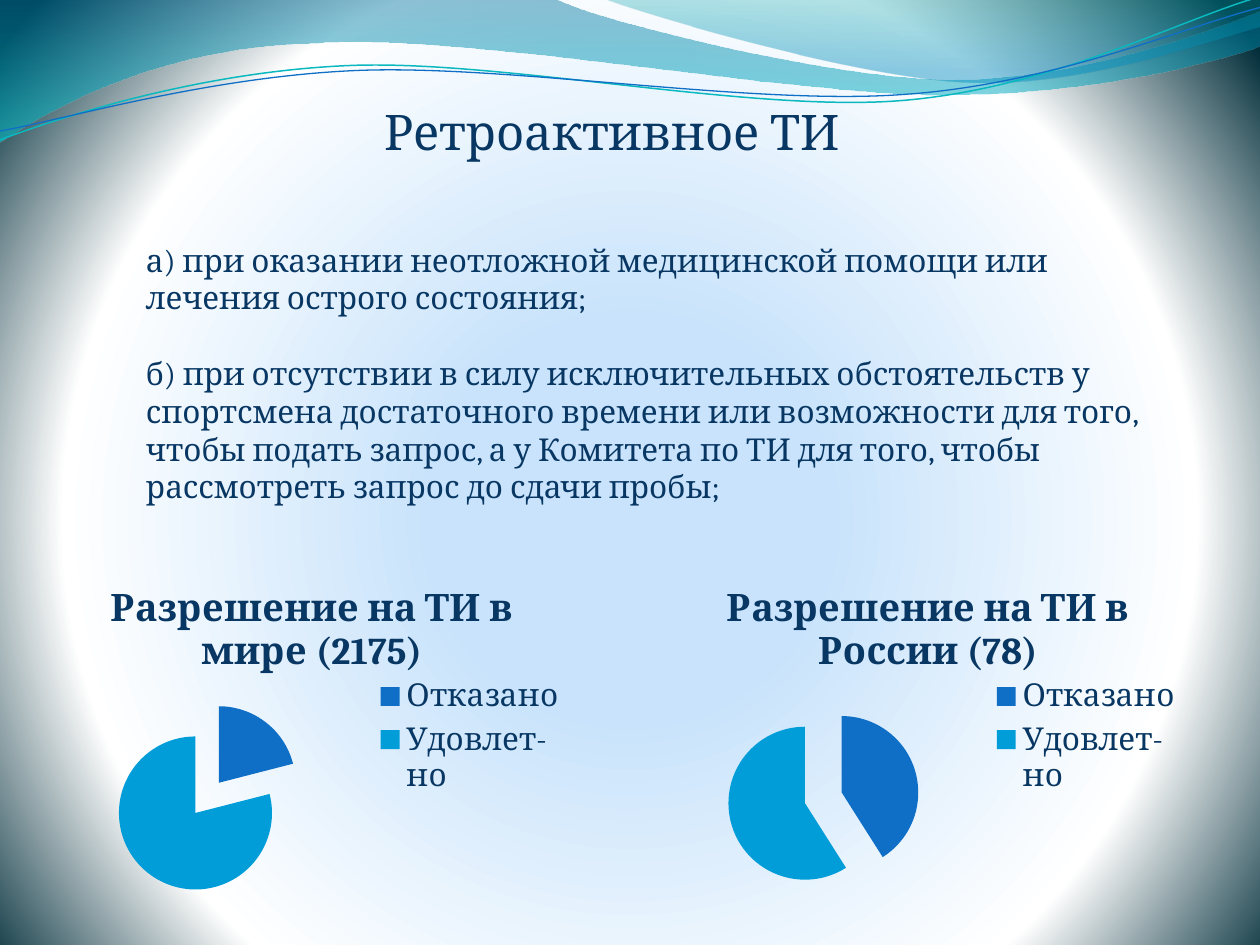
from dataclasses import dataclass
from math import cos, radians, sin

from lxml import etree
from pptx import Presentation
from pptx.chart.data import CategoryChartData
from pptx.dml.color import RGBColor
from pptx.enum.chart import XL_CHART_TYPE, XL_LEGEND_POSITION
from pptx.enum.text import MSO_AUTO_SIZE
from pptx.oxml import parse_xml
from pptx.oxml.ns import nsdecls, qn
from pptx.slide import Slide
from pptx.util import Inches, Pt

FONT = "Cambria"
COLORS = {
    "text": "083763", "chart": "FFFFFF", "refused": "0F6FC6", "granted": "009DD9",
    "outline": "FF0000", "teal_line": "0AB8BF", "blue_line": "0F6FC6",
}
TILT = 357.3
Point = tuple[float, float]


@dataclass
class Wave:
    """Segments hold one point for a line or three for a Bezier curve."""
    start: Point
    segments: list[tuple[Point, ...]]
    stops: tuple = ()
    line: str = ""
    width: float = 0
    center: Point = (0, 0)


@dataclass
class Pie:
    title: str
    left: float
    values: tuple[int, int]


WAVES = [
    Wave((0, 0), [
        ((4.4, -0.01),), ((4.76, 0.17), (6.64, 0.63), (7.58, 0.63)),
        ((8.53, 0.63), (9.58, 0.26), (10, 0.09)), ((10.01, 0.36),),
        ((9.83, 0.44), (8.7, 0.76), (7.46, 0.75)),
        ((6.22, 0.75), (3.82, 0.28), (2.57, 0.34)),
        ((1.29, 0.36), (0.46, 0.83), (-0.01, 1.13)), ((0, 0),),
    ], stops=((0, "0074A1", 45), (100, "00C6CF", 55))),
    Wave((4.79, -0.01), [
        ((5.09, 0.11), (6.82, 0.62), (7.69, 0.65)),
        ((8.56, 0.69), (9.61, 0.32), (10, 0.21)), ((10, 0),), ((4.79, -0.01),),
    ], stops=((0, "00A1A9", 30), (80, "008BBF", 45))),
    Wave((0, 1.11), [
        ((0.48, 0.93), (1.58, 0.57), (2.77, 0.52)),
        ((3.95, 0.47), (5.93, 0.89), (7.13, 0.8)),
        ((8.33, 0.71), (9.38, 0.15), (9.98, -0.02)),
    ], line="teal_line", width=0.85, center=(4.99, 0.57)),
    Wave((0, 1.04), [
        ((0.47, 0.96), (1.64, 0.61), (2.83, 0.56)),
        ((4.03, 0.51), (5.97, 0.84), (7.17, 0.75)),
        ((8.36, 0.67), (9.41, 0.21), (10, 0.06)),
    ], line="blue_line", width=0.75, center=(5, 0.59)),
]
PIES = [
    Pie("Разрешение на ТИ в мире (2175)", 0.35, (21, 79)),
    Pie("Разрешение на ТИ в России (78)", 5.24, (41, 59)),
]
CONDITIONS = [
    "а) при оказании неотложной медицинской помощи или лечения острого состояния;",
    "б) при отсутствии в силу исключительных обстоятельств у спортсмена достаточного "
    "времени или возможности для того, чтобы подать запрос, а у Комитета по ТИ для того, "
    "чтобы рассмотреть запрос до сдачи пробы;",
]


def rgb(name: str) -> RGBColor:
    return RGBColor.from_string(COLORS[name])


def gradient(stops: tuple, direction: str) -> etree._Element:
    """Make a gradFill from (percent, colour, opacity percent) stops."""
    marks = "".join(
        f'<a:gs pos="{place * 1000}"><a:srgbClr val="{color}">'
        f'<a:alpha val="{opacity * 1000}"/></a:srgbClr></a:gs>'
        for place, color, opacity in stops
    )
    return parse_xml(f'<a:gradFill {nsdecls("a")} rotWithShape="1">'
                     f"<a:gsLst>{marks}</a:gsLst>{direction}</a:gradFill>")


def paint_background(slide: Slide) -> None:
    slide.background.fill.solid()
    properties = slide.background._cSld.bg.bgPr
    glow = gradient(
        ((25, "C8E3FB", 100), (72, "FFFFFF", 100), (100, "002C38", 100)),
        '<a:path path="circle"><a:fillToRect l="10000" t="110000" r="10000" b="100000"/></a:path>',
    )
    properties.replace(properties.find(qn("a:solidFill")), glow)


def level(point: Point, center: Point) -> Point:
    """Undo the tilt, which the shape's rotation then applies."""
    angle = radians(-TILT)
    x, y = point[0] - center[0], point[1] - center[1]
    return (center[0] + x * cos(angle) - y * sin(angle),
            center[1] + x * sin(angle) + y * cos(angle))


def bend(outline: etree._Element, segments: list[tuple[Point, ...]]) -> None:
    """Join each three straight steps of a curved segment into one Bezier."""
    steps = iter(outline.findall(qn("a:lnTo")))
    for segment in segments:
        step = next(steps)
        if len(segment) == 3:
            step.tag = qn("a:cubicBezTo")
            for _ in range(2):
                control = next(steps)
                step.append(control[0])
                outline.remove(control)


def draw_wave(slide: Slide, wave: Wave) -> None:
    points = [wave.start, *(point for segment in wave.segments for point in segment)]
    if wave.line:
        points = [level(point, wave.center) for point in points]
    points = [(Inches(x), Inches(y)) for x, y in points]
    builder = slide.shapes.build_freeform(*points[0])
    builder.add_line_segments(points[1:], close=bool(wave.stops))
    ribbon = builder.convert_to_shape()
    properties = ribbon._element.spPr
    bend(next(properties.iter(qn("a:path"))), wave.segments)
    ribbon.shadow.inherit = False
    ribbon.fill.background()
    if wave.stops:
        ribbon.line.fill.background()
        fill = gradient(wave.stops, '<a:lin ang="5400000" scaled="1"/>')
        properties.replace(properties.find(qn("a:noFill")), fill)
    else:
        ribbon.rotation = TILT
        ribbon.line.color.rgb = rgb(wave.line)
        ribbon.line.width = Pt(wave.width)


def style(font, size: float, color: str = "text") -> None:
    font.name = FONT
    font.size = Pt(size)
    font.color.rgb = rgb(color)


def add_text(slide: Slide, box: tuple, paragraphs: list[str], size: float, gap: float = 0) -> None:
    frame = slide.shapes.add_textbox(*map(Inches, box)).text_frame
    frame.word_wrap = True
    frame.auto_size = MSO_AUTO_SIZE.SHAPE_TO_FIT_TEXT
    frame.text = "\n".join(paragraphs)
    for index, paragraph in enumerate(frame.paragraphs):
        if index:
            paragraph.space_before = Pt(gap)
        style(paragraph.runs[0].font, size)


def add_pie(slide: Slide, pie: Pie) -> None:
    """Add a pie whose title is the name of its only series."""
    data = CategoryChartData()
    data.categories = ["Отказано", "Удовлет-но"]
    data.add_series(pie.title, pie.values)
    chart = slide.shapes.add_chart(
        XL_CHART_TYPE.PIE, Inches(pie.left), Inches(4.46), Inches(4.25), Inches(2.77), data
    ).chart
    style(chart.font, 18, "chart")
    chart.has_title = True
    chart.chart_title._element.append(parse_xml(
        f'<c:txPr {nsdecls("c", "a")}><a:bodyPr/><a:p><a:pPr><a:defRPr><a:solidFill>'
        f'<a:srgbClr val="{COLORS["text"]}"/></a:solidFill></a:defRPr></a:pPr></a:p></c:txPr>'))
    chart.has_legend = True
    chart.legend.position = XL_LEGEND_POSITION.RIGHT
    chart.legend.include_in_layout = False
    style(chart.legend.font, 18)

    chart.plots[0].vary_by_categories = True
    series = chart.plots[0].series[0]
    for index, color in enumerate(("refused", "granted")):
        fill = series.points[index].format.fill
        fill.solid()
        fill.fore_color.rgb = rgb(color)
    series.format.line.color.rgb = rgb("outline")
    series.format.line.width = Pt(0.75)
    explosion = parse_xml(f'<c:explosion {nsdecls("c")} val="25"/>')
    series._element.find(qn("c:spPr")).addnext(explosion)


def main() -> None:
    deck = Presentation()
    deck.slide_width, deck.slide_height = Inches(10), Inches(7.5)
    slide = deck.slides.add_slide(deck.slide_layouts[6])
    paint_background(slide)
    for wave in WAVES:
        draw_wave(slide, wave)
    add_text(slide, (2.95, 0.76, 4.02, 0.57), ["Ретроактивное ТИ"], 28)
    add_text(slide, (1.06, 1.86, 8.11, 2.22), CONDITIONS, 18, gap=21.6)
    for pie in PIES:
        add_pie(slide, pie)
    deck.save("out.pptx")


if __name__ == "__main__":
    main()
